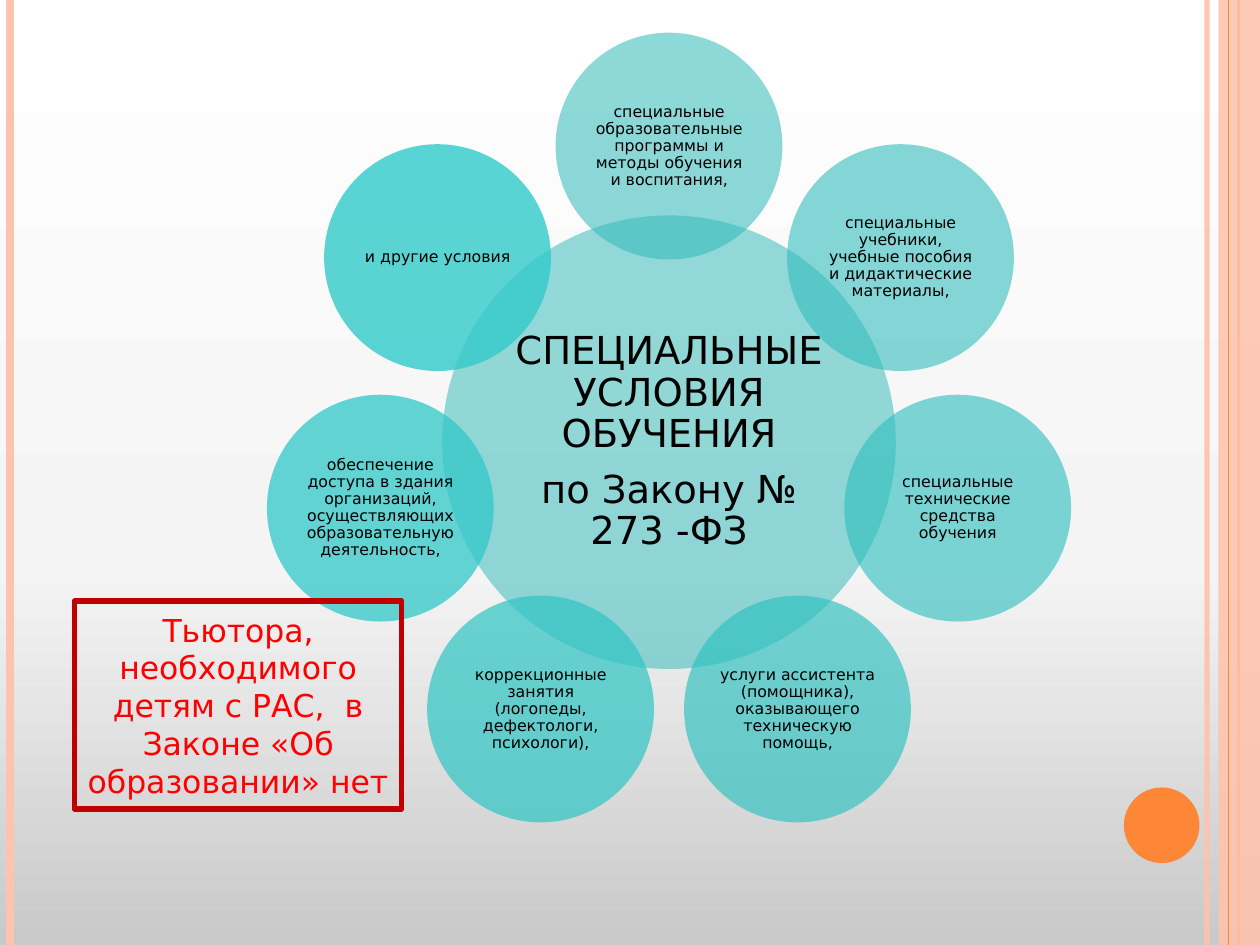
from copy import deepcopy
from dataclasses import dataclass
from math import cos, pi, sin, sqrt

from pptx import Presentation
from pptx.dml.color import RGBColor
from pptx.enum.shapes import MSO_CONNECTOR, MSO_SHAPE
from pptx.enum.text import MSO_ANCHOR, PP_ALIGN
from pptx.oxml.ns import qn
from pptx.util import Inches, Pt
from lxml import etree

OVAL = MSO_SHAPE.OVAL
RECT = MSO_SHAPE.RECTANGLE
LINE = MSO_CONNECTOR.STRAIGHT
MIDDLE = MSO_ANCHOR.MIDDLE
CENTER = PP_ALIGN.CENTER


@dataclass(frozen=True)
class Theme:
    font: str = "DejaVu Sans"
    ink: str = "000000"
    peach: str = "FEC3AE"
    orange: str = "FE8637"
    hub: str = "2BB8B7"
    frame: str = "C00000"
    alert: str = "FF0000"
    back: tuple = ((0, "C9C9C9"), (0.4, "F4F4F4"), (1, "FFFFFF"))
    title: float = 22
    note: float = 18
    small: float = 9


PETALS = [
    ("специальные образовательные программы и методы обучения и воспитания,", "2DB9B8", 54),
    ("специальные учебники, учебные пособия и дидактические материалы,", "2EBCBB", 58),
    ("специальные технические средства обучения", "2FBFBE", 62),
    ("услуги ассистента (помощника), оказывающего техническую помощь,", "2FC2C1", 67),
    ("коррекционные занятия (логопеды, дефектологи, психологи),", "30C5C4", 71),
    ("обеспечение доступа в здания организаций, осуществляющих образовательную деятельность,", "31C8C7", 75),
    ("и другие условия", "31CBCA", 80),
]


def fade(fill, alpha):
    color = fill._xPr.find(".//" + qn("a:srgbClr"))
    etree.SubElement(color, qn("a:alpha")).set("val", str(alpha * 1000))


def write(frame, *lines, size, color, font, inset=(0.1, 0.05), space=None, gap=0):
    frame.word_wrap = True
    frame.vertical_anchor = MIDDLE
    frame.margin_left = frame.margin_right = Inches(inset[0])
    frame.margin_top = frame.margin_bottom = Inches(inset[1])
    for i, text in enumerate(lines):
        para = frame.add_paragraph() if i else frame.paragraphs[0]
        para.alignment = CENTER
        para.line_spacing = space
        para.space_before = Pt(gap if i else 0)
        run = para.add_run()
        run.text = text
        run.font.size = Pt(size)
        run.font.name = font
        run.font.color.rgb = RGBColor.from_string(color)


class Painter:
    def __init__(self, slide, theme):
        self.slide = slide
        self.theme = theme

    def backdrop(self):
        fill = self.slide.background.fill
        fill.gradient()
        fill.gradient_angle = 90
        stops = self.slide._element.find(".//" + qn("a:gsLst"))
        stops.append(deepcopy(stops[-1]))
        for stop, (place, color) in zip(fill.gradient_stops, self.theme.back):
            stop.position = place
            stop.color.rgb = RGBColor.from_string(color)

    def rule(self, x, color, width, alpha=100):
        line = self.slide.shapes.add_connector(
            LINE, Inches(x), 0, Inches(x), Inches(7.5))
        line.line.width = Pt(width)
        line.line.color.rgb = RGBColor.from_string(color)
        if alpha < 100:
            fade(line.line.fill, alpha)
        etree.SubElement(line._element.spPr, qn("a:effectLst"))

    def shape(self, kind, x, y, w, h, fill=None, alpha=100, edge=None):
        item = self.slide.shapes.add_shape(
            kind, Inches(x), Inches(y), Inches(w), Inches(h))
        item.shadow.inherit = False
        if fill:
            item.fill.solid()
            item.fill.fore_color.rgb = RGBColor.from_string(fill)
            if alpha < 100:
                fade(item.fill, alpha)
        else:
            item.fill.background()
        if edge:
            item.line.color.rgb = RGBColor.from_string(edge)
            item.line.width = Pt(3)
        else:
            item.line.fill.background()
        return item

    def disc(self, x, y, size, fill, alpha, *lines, type_size, inset, gap=0):
        self.shape(OVAL, x - size / 2, y - size / 2, size, size, fill, alpha)
        side = size / sqrt(2)
        box = self.slide.shapes.add_textbox(
            Inches(x - side / 2), Inches(y - side / 2), Inches(side), Inches(side))
        write(box.text_frame, *lines, size=type_size, color=self.theme.ink,
              font=self.theme.font, inset=(inset, inset), space=0.9, gap=gap)

    def trim(self):
        t = self.theme
        self.rule(9.58, t.peach, 3, 93)
        self.rule(0.08, t.peach, 4.5)
        self.rule(9.83, t.orange, 1.5)
        self.shape(RECT, 9.67, 0, 0.33, 7.5, t.peach, 87)
        self.rule(9.75, t.orange, 0.75)
        self.shape(OVAL, 8.92, 6.25, 0.6, 0.6, t.orange)

    def flower(self, x, y, radius):
        t = self.theme
        self.disc(x, y, 3.6, t.hub, 50, "СПЕЦИАЛЬНЫЕ УСЛОВИЯ ОБУЧЕНИЯ",
                  "по Закону № 273 -ФЗ", type_size=t.title, inset=0.03, gap=7.7)
        for i, (text, fill, alpha) in enumerate(PETALS):
            turn = 2 * pi * i / len(PETALS)
            self.disc(x + radius * sin(turn), y - radius * cos(turn), 1.8,
                      fill, alpha, text, type_size=t.small, inset=0.01)

    def note(self, text):
        t = self.theme
        box = self.shape(RECT, 0.59, 4.77, 2.6, 1.65, edge=t.frame)
        write(box.text_frame, text, size=t.note, color=t.alert, font=t.font)


def main():
    deck = Presentation()
    deck.slide_width = Inches(10)
    deck.slide_height = Inches(7.5)
    page = Painter(deck.slides.add_slide(deck.slide_layouts[6]), Theme())
    page.backdrop()
    page.trim()
    page.flower(5.31, 3.51, 2.35)
    page.note("Тьютора, необходимого детям с РАС,  в Законе «Об образовании» нет")
    deck.save("out.pptx")


if __name__ == "__main__":
    main()
